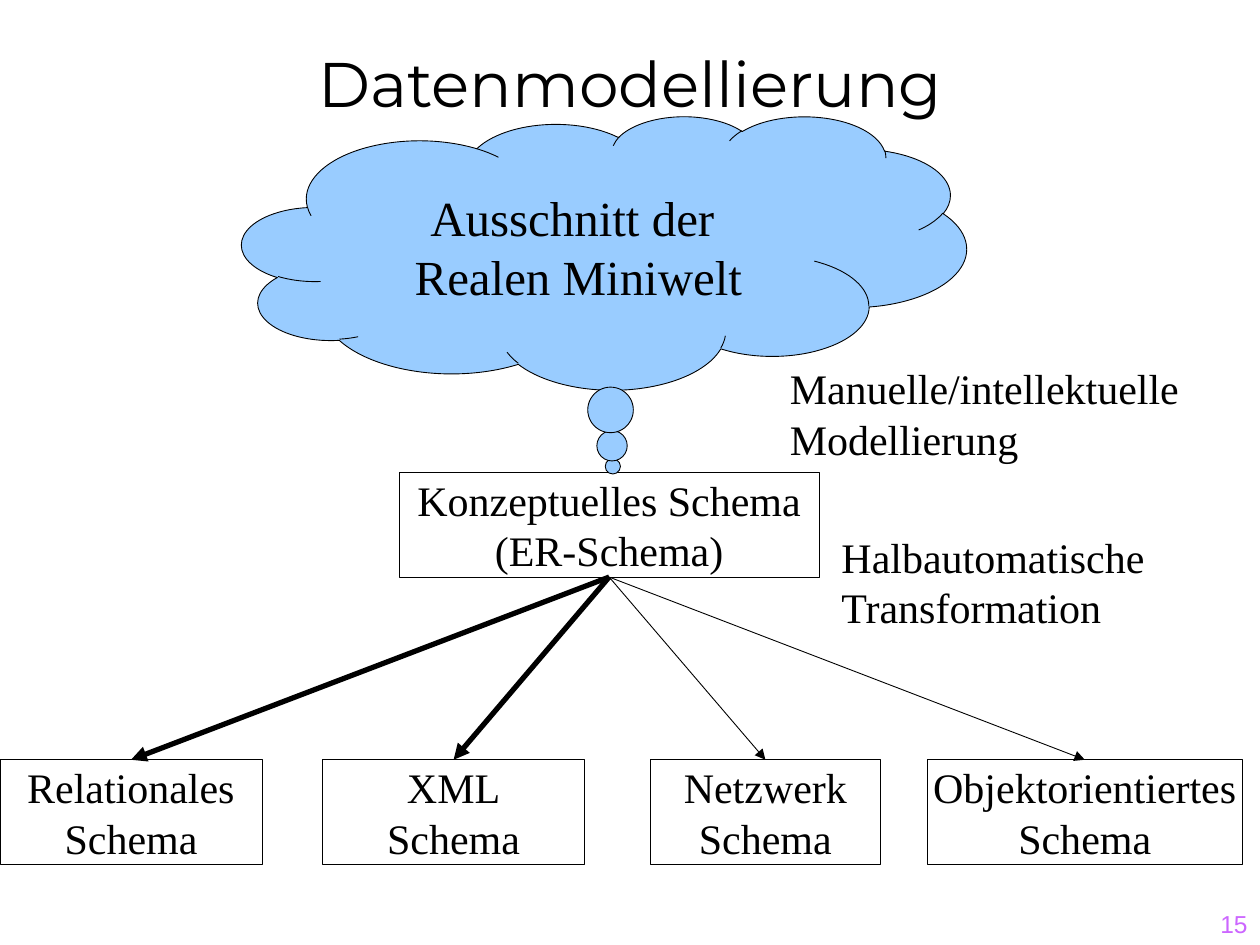
from lxml import etree
from pptx import Presentation
from pptx import util as u
from pptx.dml.color import RGBColor
from pptx.enum import shapes, text
from pptx.oxml.ns import qn

COLORS = {"ink": "000000", "cloud": "99CCFF", "number": "CC66FF"}
SERIF = "Times New Roman"
ALIGN, ANCHOR = text.PP_ALIGN, text.MSO_ANCHOR

# Content: boxes are left, top, width, height in inches
TITLE = ("Datenmodellierung", (0, 0, 10, 1))
CLOUD = (["Ausschnitt der ", "Realen Miniwelt"], (1.92, 0.92, 5.75, 2.17))
CLOUD_TAIL = (0.012, 0.782)
CONCEPT = (["Konzeptuelles Schema", "(ER-Schema)"], (3.17, 3.75, 3.33, 0.83))
NOTES = [
    (["Manuelle/intellektuelle Modellierung"], (6.17, 2.83, 3.67, 0.9)),
    (["Halbautomatische", "Transformation"], (6.58, 4.17, 3.5, 0.9)),
]
NUMBER = (["15"], (7.92, 7, 2.08, 0.5))
TARGET_TOP, TARGET_HEIGHT = 6.03, 0.83
# Target schema: name, left, width, arrow weight
TARGETS = [
    ("Relationales", 0, 2.08, 3),
    ("XML", 2.56, 2.08, 3),
    ("Netzwerk", 5.16, 1.83, 0.5),
    ("Objektorientiertes", 7.36, 2.5, 0.5),
]


def color(name):
    return RGBColor.from_string(COLORS[name])


def inches(box):
    return [u.Inches(value) for value in box]


def write(frame, lines, size, font=SERIF, ink="ink", align=ALIGN.CENTER,
          anchor=ANCHOR.MIDDLE, wrap=True):
    frame_format = {"word_wrap": wrap, "vertical_anchor": anchor,
                    "auto_size": text.MSO_AUTO_SIZE.NONE}
    for key, value in frame_format.items():
        setattr(frame, key, value)
    frame.text = "\n".join(lines)
    for paragraph in frame.paragraphs:
        paragraph.alignment = align
        for key, value in {"size": u.Pt(size), "name": font, "bold": False}.items():
            setattr(paragraph.runs[0].font, key, value)
        paragraph.runs[0].font.color.rgb = color(ink)


def add_outlined(slide, kind, lines, box, size, weight, fill=None, wrap=False):
    outlined = slide.shapes.add_shape(kind, *inches(box))
    outlined.shadow.inherit = False
    if fill:
        outlined.fill.solid()
        outlined.fill.fore_color.rgb = color(fill)
    else:
        outlined.fill.background()
    outlined.line.color.rgb = color("ink")
    outlined.line.width = u.Pt(weight)
    write(outlined.text_frame, lines, size, wrap=wrap)
    return outlined


def add_schema(slide, lines, box):
    return add_outlined(slide, shapes.MSO_SHAPE.RECTANGLE, lines, box, 24, 0.25)


def add_arrow(slide, source, target, weight):
    arrow = slide.shapes.add_connector(shapes.MSO_CONNECTOR.STRAIGHT, 0, 0, 0, 0)
    arrow.begin_connect(source, 2)
    arrow.end_connect(target, 0)
    arrow.line.color.rgb = color("ink")
    arrow.line.width = u.Pt(weight)
    etree.SubElement(arrow.line._get_or_add_ln(), qn("a:tailEnd"), type="triangle")
    etree.SubElement(arrow._element.spPr, qn("a:effectLst"))


def add_label(slide, lines, box, size, **style):
    label = slide.shapes.add_textbox(*inches(box))
    write(label.text_frame, lines, size, **style)


def main():
    deck = Presentation()
    deck.slide_width, deck.slide_height = inches((10, 7.5))
    slide = deck.slides.add_slide(deck.slide_layouts[5])

    # Title
    name, box = TITLE
    title = slide.shapes.title
    for key, value in zip(("left", "top", "width", "height"), inches(box)):
        setattr(title, key, value)
    write(title.text_frame, [name], 36, font="Montserrat", anchor=ANCHOR.BOTTOM)

    # Real world cloud above the conceptual schema
    concept = add_schema(slide, *CONCEPT)
    cloud = add_outlined(slide, shapes.MSO_SHAPE.CLOUD_CALLOUT, *CLOUD, 28, 0.5,
                         fill="cloud", wrap=True)
    for index, value in enumerate(CLOUD_TAIL):
        cloud.adjustments[index] = value

    # Target schemas, each with its arrow
    for name, left, width, weight in TARGETS:
        target = add_schema(slide, [name, "Schema"],
                            (left, TARGET_TOP, width, TARGET_HEIGHT))
        add_arrow(slide, concept, target, weight)

    # Step notes and slide number
    for lines, box in NOTES:
        add_label(slide, lines, box, 24, align=ALIGN.LEFT, anchor=ANCHOR.TOP)
    add_label(slide, *NUMBER, 14, font="Arial", ink="number",
              align=ALIGN.RIGHT, anchor=ANCHOR.BOTTOM)

    deck.save("out.pptx")


if __name__ == "__main__":
    main()
